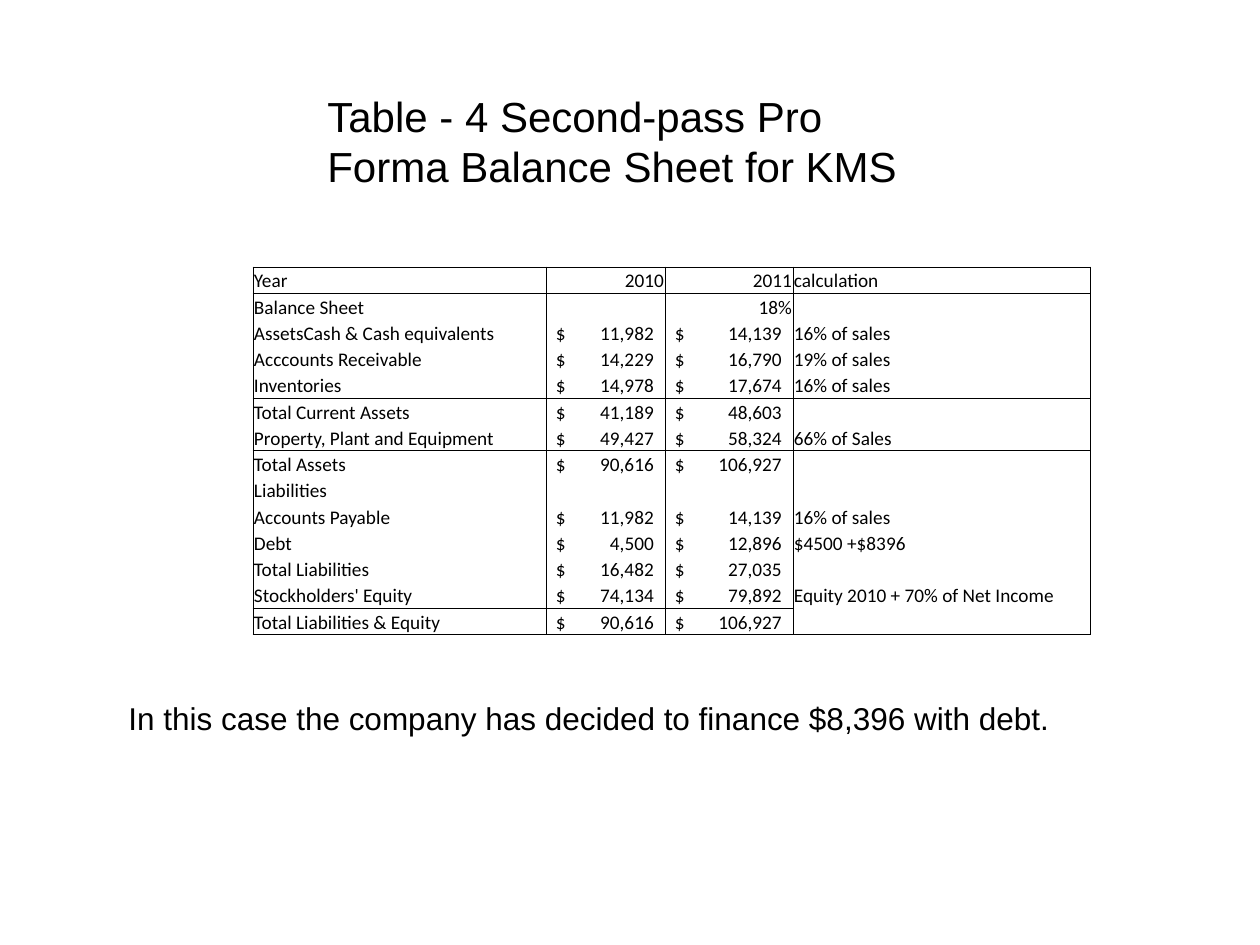
from lxml import etree
from pptx import Presentation
from pptx import util as u
from pptx.dml.color import RGBColor
from pptx.enum import text
from pptx.oxml import ns

PX = 914400 // 126
BLACK = RGBColor(0x00, 0x00, 0x00)
LINE_WIDTH = u.Pt(0.5)

COLUMN_WIDTHS = [293, 119, 128, 298]
TABLE_HEIGHT = 368
AMOUNT_INDENT = 10
AMOUNT_TABS = {1: 98, 2: 107}  # right edge of the amounts, by column
RULED_ROWS = {0, 4, 6, 12, 13}  # rows with a line below

BALANCE_SHEET = [
    ("Year", "2010", "2011", "calculation"),
    ("Balance Sheet", "", "18%", ""),
    ("AssetsCash & Cash equivalents", "$\t11,982", "$\t14,139", "16% of sales"),
    ("Acccounts Receivable", "$\t14,229", "$\t16,790", "19% of sales"),
    ("Inventories", "$\t14,978", "$\t17,674", "16% of sales"),
    ("Total Current Assets", "$\t41,189", "$\t48,603", ""),
    ("Property, Plant and Equipment", "$\t49,427", "$\t58,324", "66% of Sales"),
    ("Total Assets", "$\t90,616", "$\t106,927", ""),
    ("Liabilities", "", "", ""),
    ("Accounts Payable", "$\t11,982", "$\t14,139", "16% of sales"),
    ("Debt", "$\t4,500", "$\t12,896", "$4500 +$8396"),
    ("Total Liabilities", "$\t16,482", "$\t27,035", ""),
    ("Stockholders' Equity", "$\t74,134", "$\t79,892", "Equity 2010 + 70% of Net Income"),
    ("Total Liabilities & Equity", "$\t90,616", "$\t106,927", ""),
]


def set_borders(cell, sides):
    """Rule the given sides (letters of LRTB) and leave the others open."""
    properties = cell._tc.get_or_add_tcPr()
    for side in "LRTB":
        line = etree.SubElement(properties, ns.qn(f"a:ln{side}"), w=str(LINE_WIDTH))
        if side in sides:
            fill = etree.SubElement(line, ns.qn("a:solidFill"))
            etree.SubElement(fill, ns.qn("a:srgbClr"), val=str(BLACK))
        else:
            etree.SubElement(line, ns.qn("a:noFill"))


prs = Presentation()
prs.slide_width, prs.slide_height = 1260 * PX, 945 * PX
slide = prs.slides.add_slide(prs.slide_layouts[6])

for wording, size, left, top, width, height in [
    ("Table - 4 Second-pass Pro Forma Balance Sheet for KMS", 24, 315, 84, 630, 115),
    ("In this case the company has decided to finance $8,396 with debt.", 18, 116, 693, 998, 50),
]:
    frame = slide.shapes.add_textbox(left * PX, top * PX, width * PX, height * PX).text_frame
    frame.word_wrap = True
    paragraph = frame.paragraphs[0]
    paragraph.text = wording
    paragraph.font.name = "Arial"
    paragraph.font.size = u.Pt(size)
    paragraph.font.color.rgb = BLACK

row_count = len(BALANCE_SHEET)
sheet = slide.shapes.add_table(
    row_count, len(COLUMN_WIDTHS), 253 * PX, 267 * PX, sum(COLUMN_WIDTHS) * PX, TABLE_HEIGHT * PX
).table
sheet.first_row = False
sheet.horz_banding = False
for column, width in zip(sheet.columns, COLUMN_WIDTHS):
    column.width = width * PX

for r, entries in enumerate(BALANCE_SHEET):
    sheet.rows[r].height = TABLE_HEIGHT * PX // row_count
    for c, entry in enumerate(entries):
        cell = sheet.cell(r, c)
        cell.vertical_anchor = text.MSO_ANCHOR.BOTTOM
        cell.margin_left = cell.margin_right = cell.margin_top = PX
        cell.margin_bottom = 0

        paragraph = cell.text_frame.paragraphs[0]
        paragraph.text = entry
        paragraph.font.name = "Calibri"
        paragraph.font.size = u.Pt(11)
        paragraph.font.color.rgb = BLACK
        if not entry:
            paragraph._p.get_or_add_endParaRPr().set("sz", "1100")
        elif "\t" in entry:
            cell.margin_left = AMOUNT_INDENT * PX
            tabs = etree.Element(ns.qn("a:tabLst"))
            etree.SubElement(tabs, ns.qn("a:tab"), pos=str(AMOUNT_TABS[c] * PX), algn="r")
            paragraph._p.get_or_add_pPr().insert(0, tabs)
        elif c in AMOUNT_TABS:
            paragraph.alignment = text.PP_ALIGN.RIGHT

        sides = "LR"
        if r == 0 or (r - 1 in RULED_ROWS and (r, c) != (13, 3)):
            sides += "T"
        if r in RULED_ROWS and (r, c) != (12, 3):
            sides += "B"
        set_borders(cell, sides)
        cell.fill.background()

prs.save("out.pptx")
